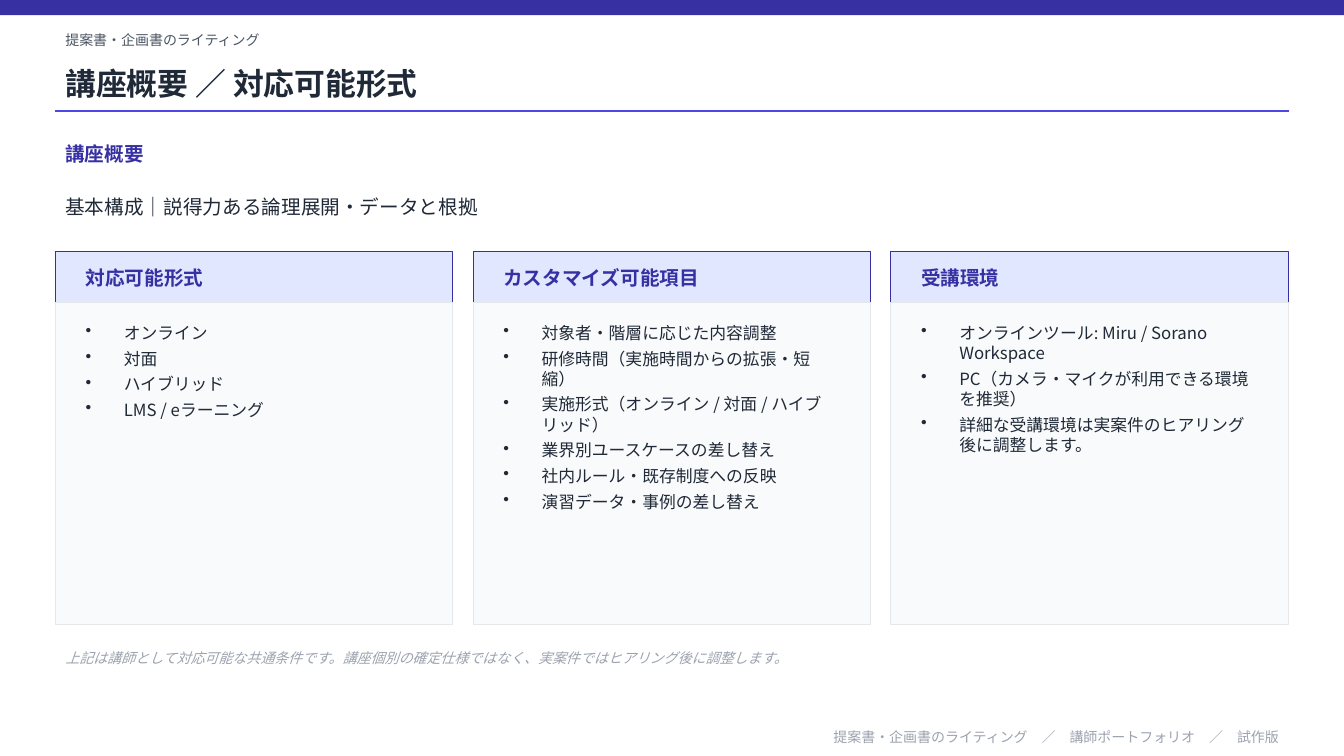
import pptx
import pptx.util
import pptx.dml.color
import pptx.enum.shapes
import pptx.enum.text
import pptx.oxml
import pptx.oxml.ns
from pptx.util import Inches

RGBColor = pptx.dml.color.RGBColor
INDIGO = RGBColor(0x37, 0x30, 0xA3)
VIOLET = RGBColor(0x4F, 0x46, 0xE5)
LAVENDER = RGBColor(0xE0, 0xE7, 0xFF)
INK = RGBColor(0x1F, 0x29, 0x37)
SLATE = RGBColor(0x4B, 0x55, 0x63)
MUTED = RGBColor(0x9C, 0xA3, 0xAF)
MIST = RGBColor(0xF9, 0xFA, 0xFB)
BORDER = RGBColor(0xE5, 0xE7, 0xEB)
FONT = "Noto Sans CJK JP"
NAMESPACE = pptx.oxml.ns.nsdecls("a")
MIDDLE = pptx.enum.text.MSO_ANCHOR.MIDDLE
TOP = pptx.enum.text.MSO_ANCHOR.TOP
LEFT = pptx.enum.text.PP_ALIGN.LEFT
RIGHT = pptx.enum.text.PP_ALIGN.RIGHT

deck = pptx.Presentation()
deck.slide_width = Inches(13.33)
deck.slide_height = Inches(7.5)
slide = deck.slides.add_slide(deck.slide_layouts[6])


def add_panel(left, top, width, height, fill, border=None):
    panel = slide.shapes.add_shape(
        pptx.enum.shapes.MSO_SHAPE.RECTANGLE,
        Inches(left), Inches(top), Inches(width), Inches(height))
    panel.shadow.inherit = False
    panel.fill.solid()
    panel.fill.fore_color.rgb = fill
    if border is None:
        panel.line.fill.background()
    else:
        panel.line.color.rgb = border
        panel.line.width = pptx.util.Pt(0.75)


def add_text(left, top, width, height, lines, size, color,
             anchor=MIDDLE, align=LEFT, bullets=False, **style):
    box = slide.shapes.add_textbox(
        Inches(left), Inches(top), Inches(width), Inches(height))
    frame = box.text_frame
    frame.word_wrap = True
    frame.vertical_anchor = anchor
    formats = {"name": FONT, "size": pptx.util.Pt(size), **style}
    for index, line in enumerate(lines):
        paragraph = frame.add_paragraph() if index else frame.paragraphs[0]
        paragraph.alignment = align
        if bullets:
            paragraph.space_after = pptx.util.Pt(4)
            properties = paragraph._p.get_or_add_pPr()
            properties.set("marL", str(Inches(0.38)))
            properties.set("indent", str(Inches(-0.38)))
            properties.append(pptx.oxml.parse_xml(f'<a:buChar {NAMESPACE} char="•"/>'))
        run = paragraph.add_run()
        run.text = line
        for attribute, value in formats.items():
            setattr(run.font, attribute, value)
        run.font.color.rgb = color
        run._r.get_or_add_rPr().append(
            pptx.oxml.parse_xml(f'<a:ea {NAMESPACE} typeface="{FONT}"/>'))


MARGIN, CONTENT_WIDTH = 0.55, 12.23

add_panel(0, 0, 13.33, 0.15, INDIGO)
add_text(MARGIN, 0.25, CONTENT_WIDTH, 0.3, ["提案書・企画書のライティング"], 10, SLATE)
add_text(MARGIN, 0.55, CONTENT_WIDTH, 0.55, ["講座概要 ／ 対応可能形式"], 22, INK, bold=True)

title_rule = slide.shapes.add_connector(
    pptx.enum.shapes.MSO_CONNECTOR.STRAIGHT,
    Inches(MARGIN), Inches(1.1), Inches(MARGIN + CONTENT_WIDTH), Inches(1.1))
title_rule.line.color.rgb = VIOLET
title_rule.line.width = pptx.util.Pt(1)
title_rule._element.spPr.append(pptx.oxml.parse_xml(f"<a:effectLst {NAMESPACE}/>"))

add_text(MARGIN, 1.35, CONTENT_WIDTH, 0.35, ["講座概要"], 14, INDIGO, bold=True)
add_text(MARGIN, 1.75, CONTENT_WIDTH, 0.6,
         ["基本構成｜説得力ある論理展開・データと根拠"], 14, INK)

cards = [
    ("対応可能形式", ["オンライン", "対面", "ハイブリッド", "LMS / eラーニング"]),
    ("カスタマイズ可能項目", [
        "対象者・階層に応じた内容調整",
        "研修時間（実施時間からの拡張・短縮）",
        "実施形式（オンライン / 対面 / ハイブリッド）",
        "業界別ユースケースの差し替え",
        "社内ルール・既存制度への反映",
        "演習データ・事例の差し替え",
    ]),
    ("受講環境", [
        "オンラインツール: Miru / Sorano Workspace",
        "PC（カメラ・マイクが利用できる環境を推奨）",
        "詳細な受講環境は実案件のヒアリング後に調整します。",
    ]),
]
GAP, INSET = 0.2, 0.2
card_width = (CONTENT_WIDTH - GAP * (len(cards) - 1)) / len(cards)
text_width = card_width - 2 * INSET
for column, (heading, items) in enumerate(cards):
    left = MARGIN + column * (card_width + GAP)
    add_panel(left, 2.5, card_width, 0.5, LAVENDER, INDIGO)
    add_text(left + INSET, 2.5, text_width, 0.5, [heading], 14, INDIGO, bold=True)
    add_panel(left, 3, card_width, 3.2, MIST, BORDER)
    add_text(left + INSET, 3.15, text_width, 2.85, items, 12, INK,
             anchor=TOP, bullets=True)

add_text(MARGIN, 6.35, CONTENT_WIDTH, 0.35,
         ["上記は講師として対応可能な共通条件です。講座個別の確定仕様ではなく、実案件ではヒアリング後に調整します。"],
         10, MUTED, italic=True)
add_text(MARGIN, 7.2, CONTENT_WIDTH, 0.22,
         ["提案書・企画書のライティング　／　講師ポートフォリオ　／　試作版"],
         10, MUTED, align=RIGHT)

deck.save("out.pptx")
